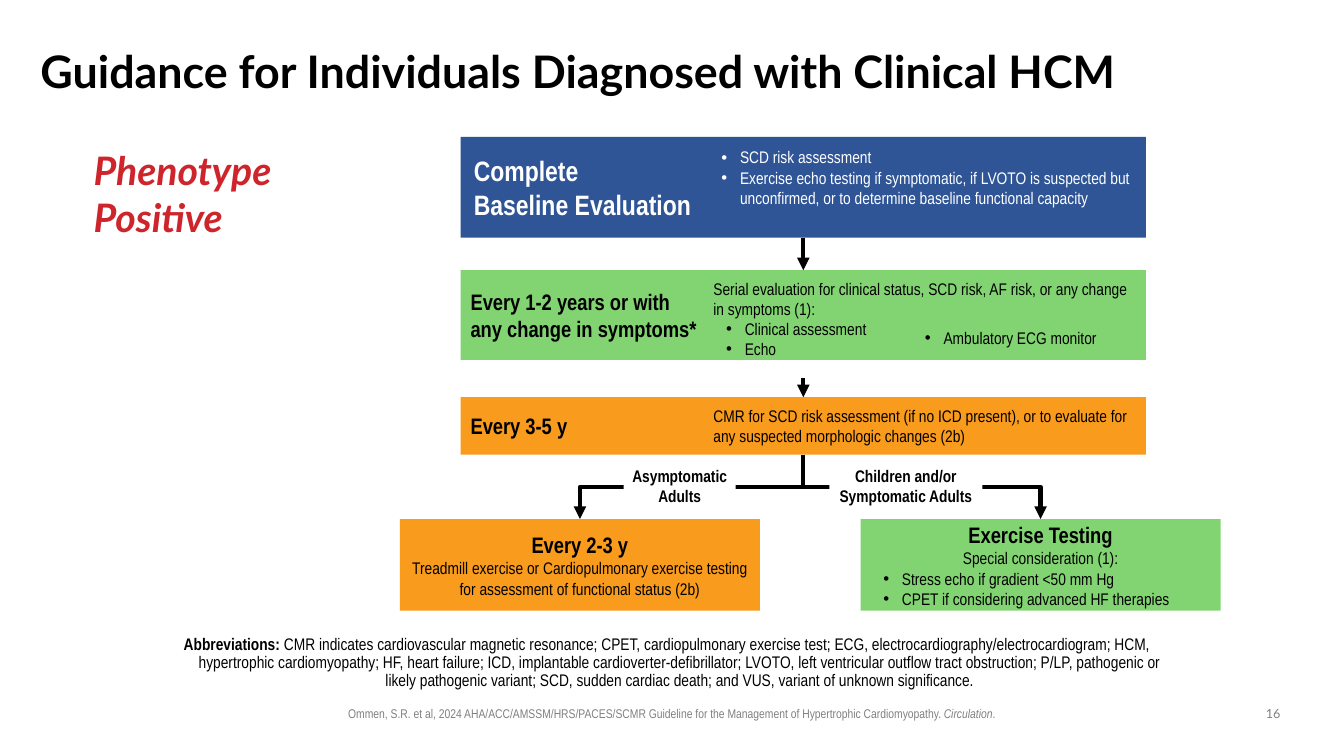
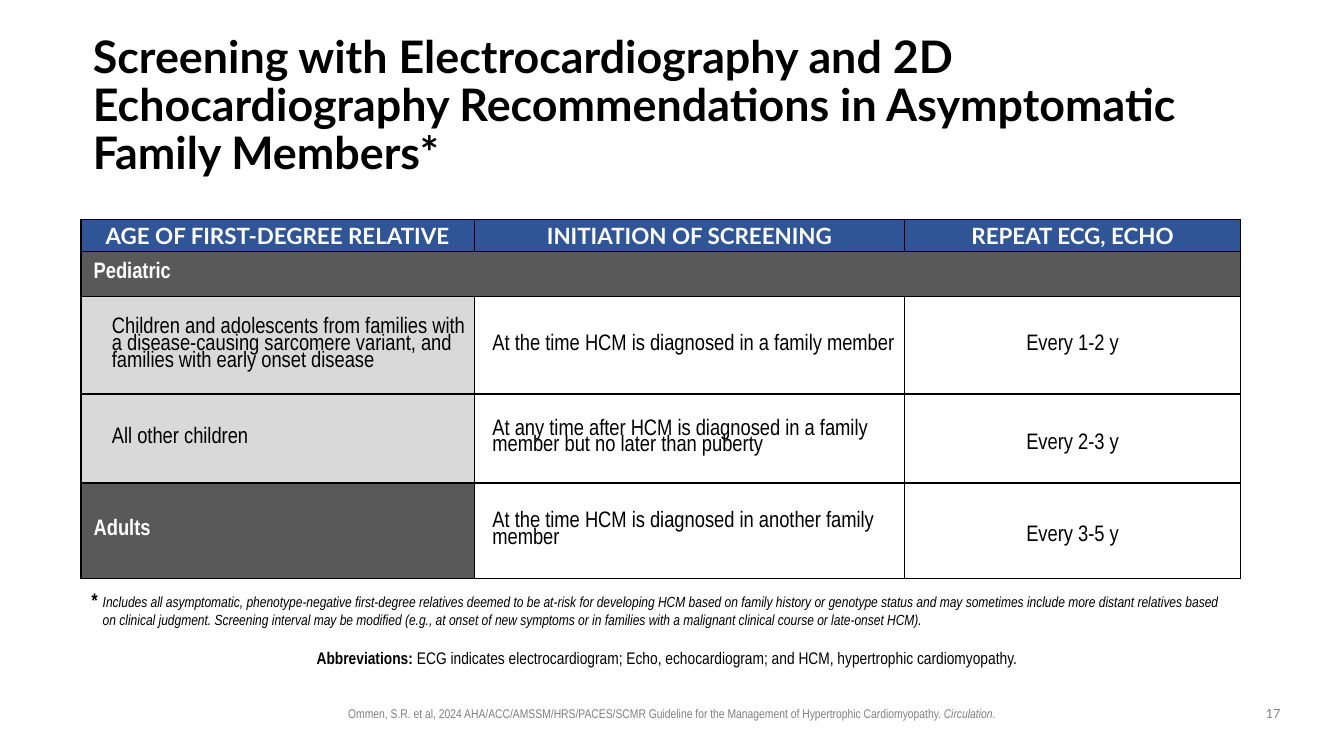
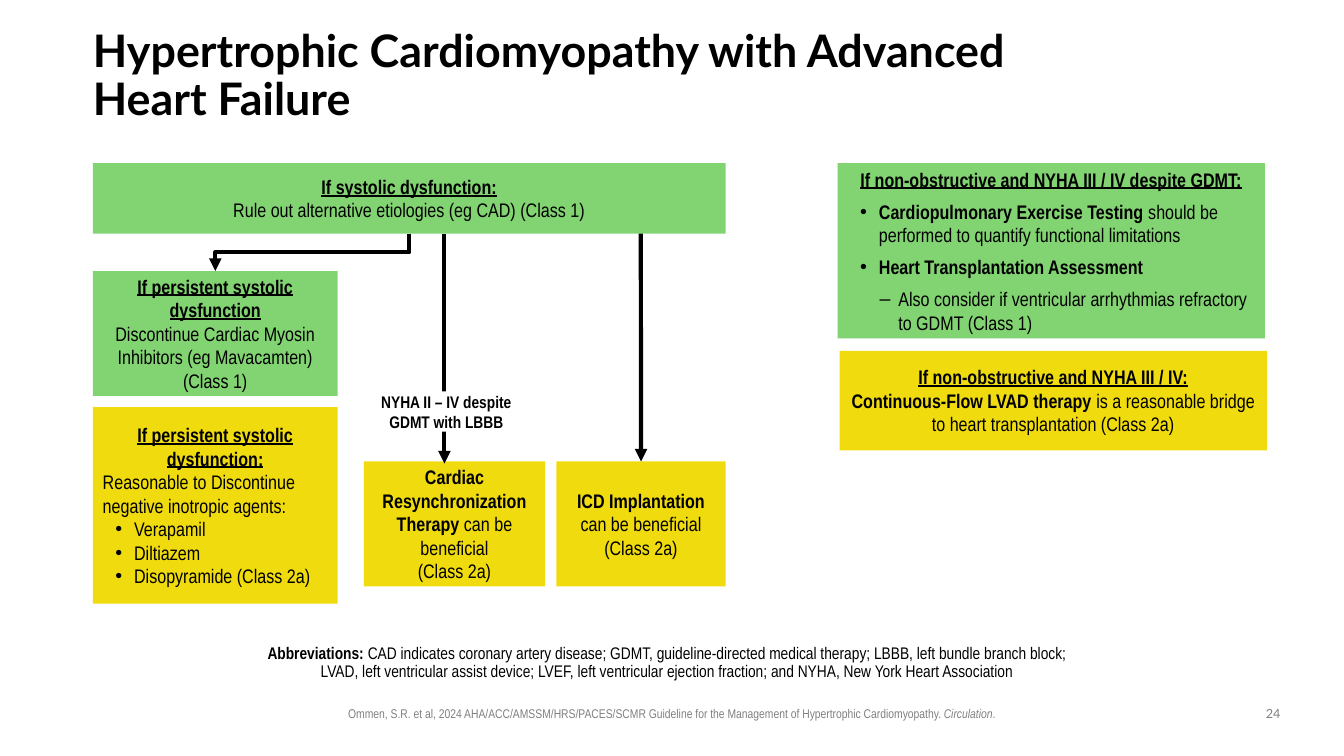
import copy

import pptx
import pptx.util
import pptx.dml.color
import pptx.enum.shapes
import pptx.enum.text
import pptx.oxml.ns
from lxml import etree

Cm, Pt = pptx.util.Cm, pptx.util.Pt
RGB = pptx.dml.color.RGBColor
qn = pptx.oxml.ns.qn
ALIGN = pptx.enum.text.PP_ALIGN
ANCHOR = pptx.enum.text.MSO_ANCHOR
CONNECTOR = pptx.enum.shapes.MSO_CONNECTOR

BLACK = RGB(0x00, 0x00, 0x00)
WHITE = RGB(0xFF, 0xFF, 0xFF)
GRAY = RGB(0x80, 0x80, 0x80)
DARK_GRAY = RGB(0x59, 0x59, 0x59)
LIGHT_GRAY = RGB(0xD9, 0xD9, 0xD9)
BLUE = RGB(0x2F, 0x55, 0x97)
GREEN = RGB(0x82, 0xD4, 0x72)
ORANGE = RGB(0xF9, 0x9B, 0x1D)
YELLOW = RGB(0xF0, 0xDB, 0x0E)
RED = RGB(0xCE, 0x24, 0x2B)

BODY_FONT, TITLE_FONT = "Arial Narrow", "Lato"
INSETS = (0.25, 0.13, 0.25, 0.13)
NO_INSETS = (0, 0, 0, 0)


# ---- Text ----
def para(*runs, align=ALIGN.LEFT, indent=0, hang=0, bullet=None, before=0, line=None, tab=None):
    """A run is plain text or (text, style letters b/i/u, optional size)."""
    return dict(runs=runs, align=align, indent=indent, hang=hang, bullet=bullet,
                before=before, line=line, tab=tab)


def centered(*runs, **options):
    return para(*runs, align=ALIGN.CENTER, **options)


def bulleted(*runs, bullet="•", indent=0.79, hang=0.47, **options):
    return para(*runs, bullet=bullet, indent=indent, hang=hang, **options)


def add_styled_run(p, run, size, color, font):
    text, style, size = ((run, "") if isinstance(run, str) else run) + (size,) \
        if isinstance(run, str) or len(run) == 2 else run
    for i, piece in enumerate(text.split("\n")):
        if i:
            p.add_line_break()
        r = p.add_run()
        r.text = piece
        r.font.name, r.font.size = font, Pt(size)
        r.font.color.rgb = color
        r.font.bold, r.font.italic = "b" in style, "i" in style
        r.font.underline = "u" in style
        if i:  # a line break takes the size of its run
            r._r.getprevious().append(copy.deepcopy(r._r.rPr))


def write(tf, paras, size=12, color=BLACK, font=BODY_FONT):
    for i, item in enumerate(paras):
        p = tf.add_paragraph() if i else tf.paragraphs[0]
        pPr = p._p.get_or_add_pPr()
        pPr.set("marL", str(Cm(item["indent"])))
        pPr.set("indent", str(-Cm(item["hang"])))
        if item["bullet"]:
            etree.SubElement(pPr, qn("a:buFont")).set("typeface", "Arial")
            etree.SubElement(pPr, qn("a:buChar")).set("char", item["bullet"])
        if item["tab"]:
            tabs = etree.SubElement(pPr, qn("a:tabLst"))
            etree.SubElement(tabs, qn("a:tab"), pos=str(Cm(item["tab"])), algn="l")
        p.alignment = item["align"]
        if item["before"]:
            p.space_before = Pt(item["before"])
        if item["line"]:
            p.line_spacing = item["line"]
        for run in item["runs"]:
            add_styled_run(p, run, size, color, font)


def set_frame(tf, insets, anchor):
    tf.word_wrap = True
    tf.auto_size = pptx.enum.text.MSO_AUTO_SIZE.NONE
    tf.margin_left, tf.margin_top, tf.margin_right, tf.margin_bottom = map(Cm, insets)
    tf.vertical_anchor = anchor


# ---- Shapes ----
def text_box(slide, box, paras, insets=INSETS, **style):
    sp = slide.shapes.add_textbox(*map(Cm, box))
    set_frame(sp.text_frame, insets, ANCHOR.TOP)
    write(sp.text_frame, paras, **style)
    return sp


def panel(slide, box, fill, paras, insets=INSETS, anchor=ANCHOR.MIDDLE, **style):
    sp = slide.shapes.add_shape(pptx.enum.shapes.MSO_SHAPE.RECTANGLE, *map(Cm, box))
    sp.shadow.inherit = False
    sp.fill.solid()
    sp.fill.fore_color.rgb = fill
    sp.line.fill.background()
    set_frame(sp.text_frame, insets, anchor)
    write(sp.text_frame, paras, **style)
    return sp


def branch_label(slide, box, text):
    panel(slide, box, WHITE, [centered((text, "b"))], NO_INSETS, ANCHOR.TOP)


def site(end, side):
    """Point of an arrow end: a pair in cm, or the middle of a shape's side."""
    if isinstance(end, tuple):
        return Cm(end[0]), Cm(end[1])
    return end.left + end.width // 2, end.top + (end.height if side == 2 else 0)


def arrow(slide, start, end, elbow=False):
    (x0, y0), (x1, y1) = site(start, 2), site(end, 0)
    kind = CONNECTOR.ELBOW if elbow else CONNECTOR.STRAIGHT
    c = slide.shapes.add_connector(kind, x0, y0, x1, y1)
    if not isinstance(start, tuple):
        c.begin_connect(start, 2)
    if not isinstance(end, tuple):
        c.end_connect(end, 0)
    if elbow:  # turn the elbow so that it leaves downwards
        w, h = y1 - y0, abs(x1 - x0)
        xfrm = c._element.spPr.find(qn("a:xfrm"))
        xfrm.attrib.clear()
        xfrm.set("rot", "5400000" if x1 < x0 else "16200000")
        if x1 > x0:
            xfrm.set("flipH", "1")
        c.left, c.top = (x0 + x1 - w) // 2, (y0 + y1 - h) // 2
        c.width, c.height = w, h
    c.line.color.rgb = BLACK
    c.line.width = Pt(3)
    etree.SubElement(c.line._get_or_add_ln(), qn("a:tailEnd")).set("type", "triangle")
    etree.SubElement(c._element.spPr, qn("a:effectLst"))


# ---- Parts shared by all slides ----
def new_slide(prs, title, title_box, number):
    slide = prs.slides.add_slide(prs.slide_layouts[5])
    sp = slide.shapes.title
    sp.left, sp.top, sp.width, sp.height = map(Cm, title_box)
    set_frame(sp.text_frame, NO_INSETS, ANCHOR.MIDDLE)
    write(sp.text_frame, [para((title, "b"), line=0.9)], size=32, font=TITLE_FONT)
    text_box(slide, (7.47, 17.65, 18.92, 0.64), [centered(
        "Ommen, S.R. et al, 2024 AHA/ACC/AMSSM/HRS/PACES/SCMR Guideline for the "
        "Management of Hypertrophic Cardiomyopathy. ", ("Circulation", "i"), ".")],
        size=9, color=GRAY)
    text_box(slide, (31.55, 17.65, 1.07, 0.66), [centered(number)],
             size=9, color=GRAY, font=TITLE_FONT)
    return slide


def abbreviations(slide, box, text, hang=0.64):
    text_box(slide, box, [centered(("Abbreviations: ", "b"), text,
                                   indent=hang, hang=hang, line=0.9)],
             insets=(0, 0.13, 0.25, 0.13))


# ---- Slide 1: evaluation flow ----
def stage(slide, box, fill, heading, details, dx=6.12, dy=0.08, size=16, color=BLACK, indent=0):
    x, y, w, h = box
    sp = panel(slide, box, fill, [para((heading, "b"), indent=indent)], size=size, color=color)
    text_box(slide, (x + dx, y + dy, w - dx, h - dy), details, color=color)
    return sp


def evaluation_flow(slide, x, y):
    left, w = x + 1.53, 17.27
    baseline = stage(slide, (left, y, w, 2.54), BLUE, "Complete\nBaseline Evaluation", [
        bulleted("SCD risk assessment", indent=0.97),
        bulleted("Exercise echo testing if symptomatic, if LVOTO is suspected but unconfirmed, "
                 "or to determine baseline functional capacity", indent=0.97),
    ], dx=5.82, dy=0.13, size=20, color=WHITE, indent=0.08)
    yearly = stage(slide, (left, y + 3.36, w, 2.26), GREEN,
                   "Every 1-2 years or with\nany change in symptoms*", [
        para("Serial evaluation for clinical status, SCD risk, AF risk, "
             "or any change in symptoms (1):"),
        bulleted("Clinical assessment"), bulleted("Echo")])
    text_box(slide, (left + 11.13, y + 4.68, 6.14, 0.74), [bulleted("Ambulatory ECG monitor")])
    imaging = stage(slide, (left, y + 6.56, w, 1.45), ORANGE, "Every 3-5 y", [
        para("CMR for SCD risk assessment (if no ICD present), or to evaluate for "
             "any suspected morphologic changes (2b)")])
    treadmill = panel(slide, (x, y + 9.63, 9.07, 2.31), ORANGE, [
        centered(("Every 2-3 y", "b", 16)),
        centered("Treadmill exercise or Cardiopulmonary exercise testing "
                 "for assessment of functional status (2b)")])
    exercise = panel(slide, (x + 11.61, y + 9.63, 9.07, 2.31), GREEN, [
        centered(("Exercise Testing", "b", 16)),
        centered("Special consideration (1):"),
        bulleted("Stress echo if gradient <50 mm Hg"),
        bulleted("CPET if considering advanced HF therapies")])

    arrow(slide, baseline, yearly)
    arrow(slide, (left + w / 2, y + 6.08), imaging)
    for target in (treadmill, exercise):
        arrow(slide, imaging, target, elbow=True)
    branch_label(slide, (x + 5.64, y + 8.28, 2.82, 1.02), "Asymptomatic Adults")
    branch_label(slide, (x + 10.82, y + 8.28, 3.86, 1.02), "Children and/or Symptomatic Adults")


def guidance_slide(prs):
    slide = new_slide(prs, "Guidance for Individuals Diagnosed with Clinical HCM",
                      (1.02, 0.94, 30.28, 1.83), "16")
    text_box(slide, (2.11, 3.56, 8, 2.64), [para(("Phenotype Positive", "bi"))],
             size=28, color=RED, font=TITLE_FONT)
    evaluation_flow(slide, 10.08, 3.45)
    abbreviations(
        slide, (4.06, 15.9, 25.76, 1.07),
        "CMR indicates cardiovascular magnetic resonance; CPET, cardiopulmonary exercise test; "
        "ECG, electrocardiography/electrocardiogram; HCM, hypertrophic cardiomyopathy; HF, heart "
        "failure; ICD, implantable cardioverter-defibrillator; LVOTO, left ventricular outflow "
        "tract obstruction; P/LP, pathogenic or likely pathogenic variant; SCD, sudden cardiac "
        "death; and VUS, variant of unknown significance.")


# ---- Slide 2: screening table ----
def fill_cell(cell, item, fill, color=BLACK, font=BODY_FONT):
    cell.fill.solid()
    cell.fill.fore_color.rgb = fill
    cell.margin_left = cell.margin_right = Cm(0.14)
    cell.margin_top = cell.margin_bottom = 0
    cell.vertical_anchor = ANCHOR.MIDDLE
    write(cell.text_frame, [item], size=16, color=color, font=font)
    tcPr = cell._tc.get_or_add_tcPr()
    for i, side in enumerate(("lnL", "lnR", "lnT", "lnB")):
        ln = etree.Element(qn("a:" + side), w=str(Pt(1)))
        solid = etree.SubElement(ln, qn("a:solidFill"))
        etree.SubElement(solid, qn("a:srgbClr")).set("val", str(BLACK))
        tcPr.insert(i, ln)


def screening_table(slide, x, y):
    headers = ("AGE OF FIRST-DEGREE RELATIVE", "INITIATION OF SCREENING", "REPEAT ECG, ECHO")
    # age group, start, interval, is a main group, line spacing of the interval
    rows = (
        ("Pediatric", "", "", True, 0.8),
        ("Children and adolescents from families with a disease-causing sarcomere variant, and\n"
         "families with early onset disease",
         "At the time HCM is diagnosed in a family member", "Every 1-2 y", False, 0.8),
        ("All other children",
         "At any time after HCM is diagnosed in a family member but no later than puberty",
         "Every 2-3 y", False, 1.5),
        ("Adults", "At the time HCM is diagnosed in another family member",
         "Every 3-5 y", True, 1.5),
    )
    widths, heights = (9.91, 10.85, 8.46), (0.79, 1.14, 2.46, 2.24, 2.41)
    table = slide.shapes.add_table(len(heights), len(widths), Cm(x), Cm(y),
                                   Cm(sum(widths)), Cm(sum(heights))).table
    table.first_row = table.horz_banding = False
    for column, width in zip(table.columns, widths):
        column.width = Cm(width)
    for row, height in zip(table.rows, heights):
        row.height = Cm(height)

    for i, header in enumerate(headers):
        fill_cell(table.cell(0, i), centered((header, "b")), BLUE, WHITE, TITLE_FONT)
    for i, (age, start, interval, main, line) in enumerate(rows, 1):
        age_fill, age_color = (DARK_GRAY, WHITE) if main else (LIGHT_GRAY, BLACK)
        fill_cell(table.cell(i, 0), para((age, "b" if main else ""), line=0.8,
                                         indent=0.18 if main else 0.64), age_fill, age_color)
        rest_fill = WHITE if start else DARK_GRAY
        fill_cell(table.cell(i, 1), para(start, indent=0.32, line=0.8), rest_fill)
        fill_cell(table.cell(i, 2), centered(interval, line=line), rest_fill)
    table.cell(1, 0).merge(table.cell(1, 2))


def screening_slide(prs):
    slide = new_slide(prs, "Screening with Electrocardiography and 2D Echocardiography "
                      "Recommendations in Asymptomatic Family Members*",
                      (2.34, 1.02, 27.86, 3.35), "17")
    screening_table(slide, 2.04, 5.54)
    text_box(slide, (2.04, 14.68, 29.21, 1.3), [para(
        ("*", "bi", 14),
        ("\tIncludes all asymptomatic, phenotype-negative first-degree relatives deemed to be "
         "at-risk for developing HCM based on family history or genotype status and may "
         "sometimes include more distant relatives based on clinical judgment. Screening "
         "interval may be modified (e.g., at onset of new symptoms or in families with a "
         "malignant clinical course or late-onset HCM).", "i"),
        indent=0.3, hang=0.3, tab=0.3)], size=10.5)
    abbreviations(slide, (4.06, 16.26, 25.76, 0.71),
                  "ECG indicates electrocardiogram; Echo, echocardiogram; "
                  "and HCM, hypertrophic cardiomyopathy.")


# ---- Slide 3: advanced heart failure ----
def systolic_branch(slide, x, y):
    dysfunction = panel(slide, (x, y, 15.95, 1.78), GREEN, [
        centered(("If systolic dysfunction:", "bu")),
        centered("Rule out alternative etiologies (eg CAD) (Class 1)")], size=14)
    persistent = panel(slide, (x, y + 2.72, 6.17, 3.15), GREEN, [
        centered(("If persistent systolic dysfunction", "bu")),
        centered("Discontinue Cardiac Myosin Inhibitors (eg Mavacamten) (Class 1)")], size=14)
    panel(slide, (x, y + 6.15, 6.17, 4.95), YELLOW, [
        centered(("If persistent systolic dysfunction:", "bu")),
        para("Reasonable to Discontinue negative inotropic agents:"),
        *map(bulleted, ("Verapamil", "Diltiazem", "Disopyramide (Class 2a)"))], size=14)
    panel(slide, (x + 6.83, y + 7.52, 4.57, 3.15), YELLOW, [
        centered(("Cardiac Resynchronization Therapy ", "b"),
                 "can be beneficial\n(Class 2a)")], size=14)
    icd = panel(slide, (x + 11.68, y + 7.52, 4.27, 3.15), YELLOW, [
        centered(("ICD Implantation ", "b"), "can be beneficial (Class 2a)")], size=14)

    arrow(slide, (x + 8.86, y + 1.78), (x + 8.86, y + 7.57))
    branch_label(slide, (x + 7.08, y + 5.75, 3.66, 1.02), "NYHA II – IV despite\nGDMT with LBBB")
    arrow(slide, (x + 13.81, y + 1.78), icd)
    arrow(slide, dysfunction, persistent, elbow=True)


def non_obstructive_branch(slide, x, y):
    panel(slide, (x, y, 10.77, 4.42), GREEN, [
        centered(("If non-obstructive and NYHA III / IV despite GDMT:", "bu")),
        bulleted(("Cardiopulmonary Exercise Testing ", "b"),
                 "should be performed to quantify functional limitations", before=6),
        bulleted(("Heart Transplantation Assessment", "b"), before=6),
        bulleted("Also consider if ventricular arrhythmias refractory to GDMT (Class 1)",
                 bullet="–", indent=1.28, before=6)], size=14)
    panel(slide, (x + 0.05, y + 4.73, 10.77, 2.51), YELLOW, [
        centered(("If non-obstructive and NYHA III / IV:", "bu")),
        centered(("Continuous-Flow LVAD therapy ", "b"),
                 "is a reasonable bridge to heart transplantation (Class 2a)")], size=14)


def heart_failure_slide(prs):
    slide = new_slide(prs, "Hypertrophic Cardiomyopathy with Advanced Heart Failure",
                      (2.34, 1.02, 24.61, 1.83), "24")
    systolic_branch(slide, 2.34, 4.11)
    non_obstructive_branch(slide, 21.11, 4.11)
    abbreviations(
        slide, (4.39, 16.13, 25.1, 1.02),
        "CAD indicates coronary artery disease; GDMT, guideline-directed medical therapy; "
        "LBBB, left bundle branch block;\nLVAD, left ventricular assist device; LVEF, left "
        "ventricular ejection fraction; and NYHA, New York Heart Association", hang=0)


def main():
    prs = pptx.Presentation()
    prs.slide_width, prs.slide_height = Cm(33.87), Cm(19.05)
    guidance_slide(prs)
    screening_slide(prs)
    heart_failure_slide(prs)
    prs.save("out.pptx")


if __name__ == "__main__":
    main()
